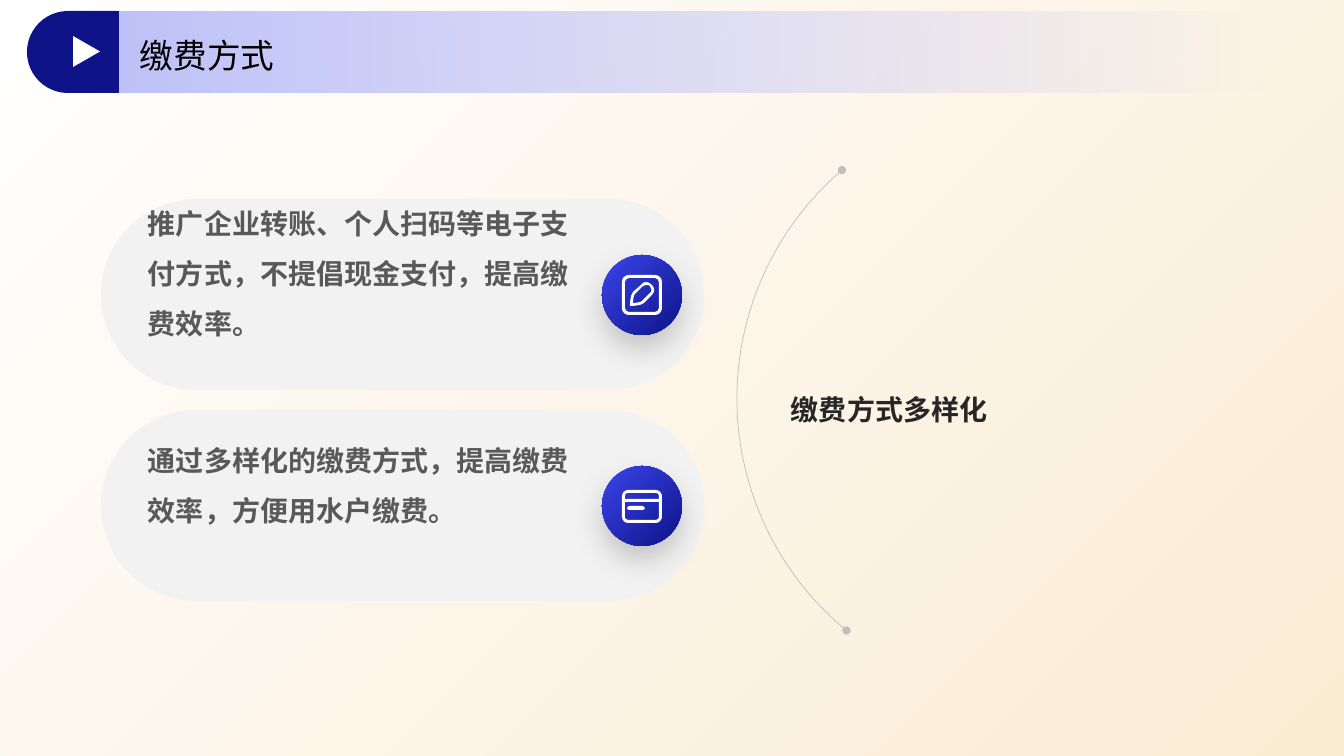
from lxml.etree import SubElement
from pptx import Presentation
from pptx.dml.color import RGBColor
from pptx.enum.shapes import MSO_SHAPE
from pptx.enum.text import MSO_ANCHOR, MSO_AUTO_SIZE
from pptx.oxml.ns import qn
from pptx.util import Pt

WHITE = RGBColor(0xFF, 0xFF, 0xFF)
BLACK = RGBColor(0x00, 0x00, 0x00)
CREAM = RGBColor(0xFA, 0xEB, 0xD3)
NAVY = RGBColor(0x0E, 0x14, 0x88)
BLUE = RGBColor(0x3B, 0x44, 0xEB)
LILAC = RGBColor(0xBE, 0xC1, 0xF8)
PALE = RGBColor(0xF2, 0xF2, 0xF2)
SILVER = RGBColor(0xBF, 0xBF, 0xBF)
GREY = RGBColor(0x59, 0x59, 0x59)
DARK = RGBColor(0x26, 0x26, 0x26)
FONT = "Noto Sans CJK SC"
SCALE = 12192000 / 1344

PEN = [
    [(24, 10), (23, 10, 22, 10, 21, 11), (13, 19), (12, 20, 11, 24, 11, 28),
     (15, 28, 19, 27, 20, 26), (28, 18), (30, 17, 30, 13, 28, 11),
     (27, 10, 26, 10, 24, 10)],
    [(24, 7), (26, 7, 28, 8, 30, 10), (33, 13, 33, 17, 30, 20), (22, 28),
     (19, 31, 8, 31, 8, 31), (8, 31, 8, 20, 11, 17), (19, 10),
     (20, 8, 22, 7, 24, 7)],
    [(7, 3), (5, 3, 3, 5, 3, 7), (3, 33), (3, 35, 5, 37, 7, 37), (33, 37),
     (35, 37, 37, 35, 37, 33), (37, 7), (37, 5, 35, 3, 33, 3)],
    [(7, 0), (33, 0), (37, 0, 40, 3, 40, 7), (40, 33), (40, 37, 37, 40, 33, 40),
     (7, 40), (3, 40, 0, 37, 0, 33), (0, 7), (0, 3, 3, 0, 7, 0)],
]
CARD = [
    [(7, 16), (21, 16), (22, 16, 23, 17, 23, 18), (23, 19, 22, 20, 21, 20),
     (7, 20), (6, 20, 5, 19, 5, 18), (5, 17, 6, 16, 7, 16)],
    [(3, 12), (3, 27), (3, 28, 4, 30, 6, 30), (27, 30), (34, 30),
     (36, 30, 37, 28, 37, 27), (37, 12), (27, 12)],
    [(6, 3), (4, 3, 3, 4, 3, 6), (3, 9), (27, 9), (37, 9), (37, 6),
     (37, 4, 36, 3, 34, 3), (27, 3)],
    [(6, 0), (27, 0), (34, 0), (37, 0, 40, 3, 40, 6), (40, 11), (40, 27),
     (40, 30, 37, 33, 34, 33), (27, 33), (6, 33), (3, 33, 0, 30, 0, 27),
     (0, 11), (0, 6), (0, 3, 3, 0, 6, 0)],
]


def emu(px):
    return round(px * SCALE)


class Deck:
    def __init__(self):
        self.file = Presentation()
        self.file.slide_width, self.file.slide_height = emu(1344), emu(756)
        self.slide = self.file.slides.add_slide(self.file.slide_layouts[6])
        self.shapes = self.slide.shapes

    def shape(self, kind, *box, fill=None, turn=0, adjust=(), flip=False):
        item = self.shapes.add_shape(kind, *map(emu, box))
        for i, value in enumerate(adjust):
            item.adjustments[i] = value
        item.rotation = turn
        if flip:
            item._element.spPr.find(qn("a:xfrm")).set("flipH", "1")
        self.paint(item, fill)
        return item

    def paint(self, item, fill):
        if fill is None:
            item.fill.background()
        else:
            item.fill.solid()
            item.fill.fore_color.rgb = fill
        item.line.fill.background()
        item.shadow.inherit = False

    def blend(self, item, first, last, angle=0, fade=False):
        item.fill.gradient()
        item.fill.gradient_angle = angle
        for stop, place, color in zip(item.fill.gradient_stops, (0, 1), (first, last)):
            stop.position = place
            stop.color.rgb = color
        if fade:
            tint = item._element.spPr.findall(".//" + qn("a:srgbClr"))[-1]
            SubElement(tint, qn("a:alpha"), val="0")

    def shade(self, item):
        effect = item._element.spPr.find(qn("a:effectLst"))
        cast = SubElement(effect, qn("a:outerShdw"), blurRad=str(Pt(20)),
                          dist=str(Pt(10)), dir="5400000", algn="t", rotWithShape="0")
        tint = SubElement(cast, qn("a:srgbClr"), val=str(GREY))
        SubElement(tint, qn("a:alpha"), val="30000")

    def arc(self, *box, adjust):
        item = self.shape(MSO_SHAPE.ARC, *box, adjust=adjust, flip=True)
        item.line.color.rgb = SILVER
        item.line.width = Pt(0.5)
        line = item._element.spPr.find(qn("a:ln"))
        for tip in ("a:headEnd", "a:tailEnd"):
            SubElement(line, qn(tip), type="oval")

    def icon(self, left, top, wide, high, loops):
        pen = self.shapes.build_freeform(0, 0, scale=SCALE)
        pen.add_line_segments([(wide, 0), (wide, high), (0, high)])
        item = pen.convert_to_shape(emu(left), emu(top))
        self.paint(item, WHITE)
        route = item._element.spPr.find(".//" + qn("a:path"))
        for old in list(route):
            route.remove(old)
        for start, *steps in loops:
            self.mark(route, "a:moveTo", start)
            for step in steps:
                self.mark(route, "a:lnTo" if len(step) == 2 else "a:cubicBezTo", step)
            SubElement(route, qn("a:close"))

    def mark(self, route, tag, step):
        node = SubElement(route, qn(tag))
        for x, y in zip(step[::2], step[1::2]):
            SubElement(node, qn("a:pt"), x=str(x), y=str(y))

    def text(self, words, *box, size=20, color=GREY, bold=True, space=1.5, grow=False):
        frame = self.shapes.add_textbox(*map(emu, box)).text_frame
        frame.word_wrap = True
        frame.auto_size = MSO_AUTO_SIZE.SHAPE_TO_FIT_TEXT if grow else MSO_AUTO_SIZE.NONE
        frame.vertical_anchor = MSO_ANCHOR.MIDDLE
        frame.margin_left = frame.margin_right = 0
        frame.margin_top = frame.margin_bottom = 0
        para = frame.paragraphs[0]
        para.line_spacing = space
        run = para.add_run()
        run.text = words
        font = run.font
        font.size, font.bold, font.name = Pt(size), bold, FONT
        font.color.rgb = color
        SubElement(run._r.get_or_add_rPr(), qn("a:ea"), typeface=FONT)

    def pill(self, top, words, head, tall):
        self.shape(MSO_SHAPE.ROUNDED_RECTANGLE, 101, top, 603, 191, fill=PALE,
                   adjust=[0.5], flip=True)
        disc = self.shape(MSO_SHAPE.OVAL, 602, top + 56, 80, 80)
        self.blend(disc, BLUE, NAVY, angle=315)
        self.shade(disc)
        self.text(words, 148, head, 424, tall, grow=True)


def main():
    deck = Deck()
    back = deck.shape(MSO_SHAPE.RECTANGLE, 0, 0, 1344, 756)
    deck.blend(back, WHITE, CREAM, angle=315)
    deck.arc(737, 98, 601, 601, adjust=[186.34, 30.33])

    deck.pill(199, "推广企业转账、个人扫码等电子支付方式，不提倡现金支付，提高缴费效率。", 189, 152)
    deck.icon(622, 275, 40, 40, PEN)
    deck.pill(410, "通过多样化的缴费方式，提高缴费效率，方便用水户缴费。", 426, 102)
    deck.icon(622, 490, 40, 33, CARD)
    deck.text("缴费方式多样化", 791, 251, 474, 299, color=DARK)

    bar = deck.shape(MSO_SHAPE.ROUNDED_RECTANGLE, 101, 12, 1169, 81)
    deck.blend(bar, LILAC, LILAC, fade=True)
    deck.text("缴费方式", 140, 26, 858, 55, size=24, color=BLACK, bold=False, space=1.1)
    deck.shape(MSO_SHAPE.ROUND_2_SAME_RECTANGLE, 32, 6, 82, 92, fill=NAVY, turn=270,
               adjust=[0.5, 0])
    deck.shape(MSO_SHAPE.ISOSCELES_TRIANGLE, 71, 38, 31, 27, fill=WHITE, turn=90)
    deck.file.save("out.pptx")


if __name__ == "__main__":
    main()
